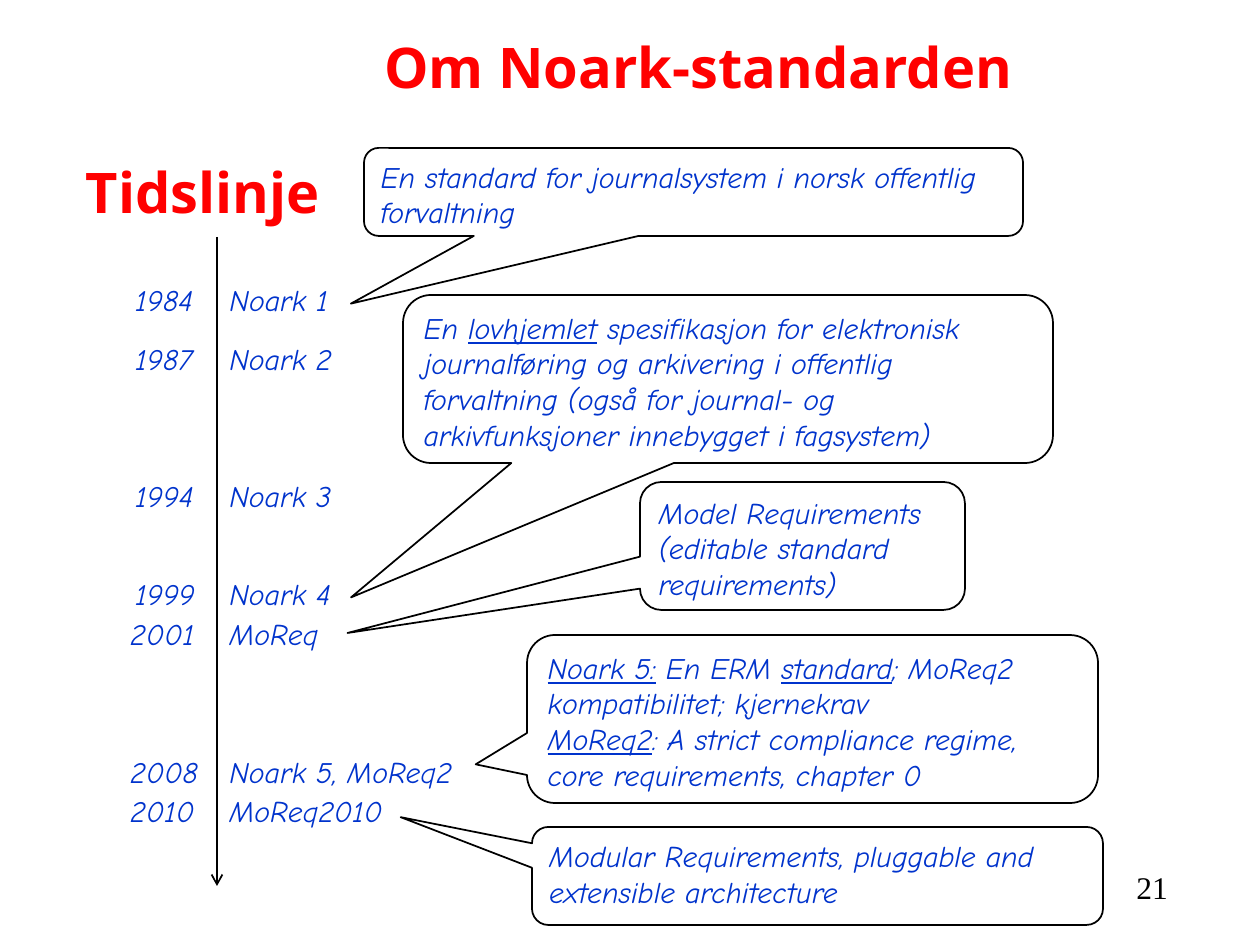
from lxml import etree
from pptx import Presentation, util as u
from pptx.dml.color import RGBColor
from pptx.enum import shapes, text
from pptx.oxml.ns import qn

PX = u.Inches(1) / 126
RED = RGBColor(0xFF, 0x00, 0x00)
BLUE = RGBColor(0x00, 0x33, 0xCC)
BLACK = RGBColor(0x00, 0x00, 0x00)


def px(*lengths):
    return [round(length * PX) for length in lengths]


def add_run(paragraph, words, face="Comic Neue", size=17, color=BLUE,
            bold=False, italic=True, underline=False):
    run = paragraph.add_run()
    run.text = words
    font = run.font
    font.name, font.size = face, u.Pt(size)
    font.bold, font.italic, font.underline = bold, italic, underline
    font.color.rgb = color


prs = Presentation()
prs.slide_width, prs.slide_height = px(1260, 945)
slide = prs.slides.add_slide(prs.slide_layouts[5])
heading_style = dict(face="Open Sans", size=32, color=RED, bold=True, italic=False)

# Timeline heading
timeline_title = slide.shapes.title
(timeline_title.left, timeline_title.top,
 timeline_title.width, timeline_title.height) = px(73, 105, 1102, 126)
frame = timeline_title.text_frame
frame.vertical_anchor = text.MSO_ANCHOR.BOTTOM
frame.auto_size = text.MSO_AUTO_SIZE.NONE
frame.paragraphs[0].alignment = text.PP_ALIGN.LEFT
add_run(frame.paragraphs[0], "Tidslinje", **heading_style)

# Topic heading
topic = slide.shapes.add_textbox(*px(372, 26, 784, 81)).text_frame
topic.word_wrap = True
add_run(topic.paragraphs[0], "Om Noark-standarden", **heading_style)

# Page number
page_number = slide.shapes.add_textbox(*px(1124, 862, 73, 50)).text_frame
page_number.word_wrap = True
add_run(page_number.paragraphs[0], "21", face="Times New Roman", size=18,
        color=BLACK, italic=False)

# Time axis
axis = slide.shapes.add_connector(shapes.MSO_CONNECTOR.STRAIGHT,
                                  *px(217, 237, 217, 886))
axis.line.color.rgb = BLACK
axis.line.width = u.Pt(1)
etree.SubElement(axis.line._get_or_add_ln(), qn("a:tailEnd"), type="arrow")
etree.SubElement(axis._element.spPr, qn("a:effectLst"))

# Milestones: year, year left, version, version width, top
milestones = [
    ("1984", 123, "Noark 1", 134, 276),
    ("1987", 123, "Noark 2", 139, 335),
    ("1994", 123, "Noark 3", 139, 472),
    ("1999", 123, "Noark 4", 139, 570),
    ("2001", 118, "MoReq", 118, 610),
    ("2008", 118, "Noark 5, MoReq2", 267, 748),
    ("2010", 118, "MoReq2010", 188, 787),
]
for year, year_left, version, version_width, top in milestones:
    for words, left, width in ((year, year_left, 94), (version, 217, version_width)):
        label = slide.shapes.add_textbox(*px(left, top, width, 49)).text_frame
        label.word_wrap = False
        label.auto_size = text.MSO_AUTO_SIZE.SHAPE_TO_FIT_TEXT
        add_run(label.paragraphs[0], words)

# Callouts: box, pointer tip, paragraphs of (words, underlined)
callouts = [
    ((403, 295, 650, 168), (-0.58, 1.3), [
        [("En ", False), ("lovhjemlet", True),
         (" spesifikasjon for elektronisk journalføring og arkivering i offentlig "
          "forvaltning (også for journal- og arkivfunksjoner innebygget i fagsystem)",
          False)]]),
    ((364, 148, 659, 88), (-0.52, 1.27), [
        [("En standard for journalsystem i norsk offentlig forvaltning", False)]]),
    ((640, 482, 325, 128), (-1.4, 0.68), [
        [("Model Requirements (editable standard requirements)", False)]]),
    ((527, 635, 571, 168), (-0.59, 0.27), [
        [("Noark 5:", True), (" En ERM ", False), ("standard", True),
         ("; MoReq2 kompatibilitet; kjernekrav", False)],
        [("MoReq2", True), (": A strict compliance regime,", False),
         ("\n", False), ("core requirements, chapter 0", False)]]),
    ((532, 827, 571, 98), (-0.73, -0.6), [
        [("Modular Requirements, pluggable and extensible architecture", False)]]),
]
for box, tip, paragraphs in callouts:
    callout = slide.shapes.add_shape(
        shapes.MSO_SHAPE.ROUNDED_RECTANGULAR_CALLOUT, *px(*box))
    callout.adjustments[0], callout.adjustments[1] = tip
    callout.shadow.inherit = False
    callout.fill.background()
    callout.line.color.rgb = BLACK
    callout.line.width = u.Pt(1)
    frame = callout.text_frame
    frame.word_wrap = True
    frame.vertical_anchor = text.MSO_ANCHOR.TOP
    for index, pieces in enumerate(paragraphs):
        paragraph = frame.add_paragraph() if index else frame.paragraphs[0]
        paragraph.alignment = text.PP_ALIGN.LEFT
        for words, underlined in pieces:
            if words == "\n":
                paragraph.add_line_break()
            else:
                add_run(paragraph, words, underline=underlined)

prs.save("out.pptx")
